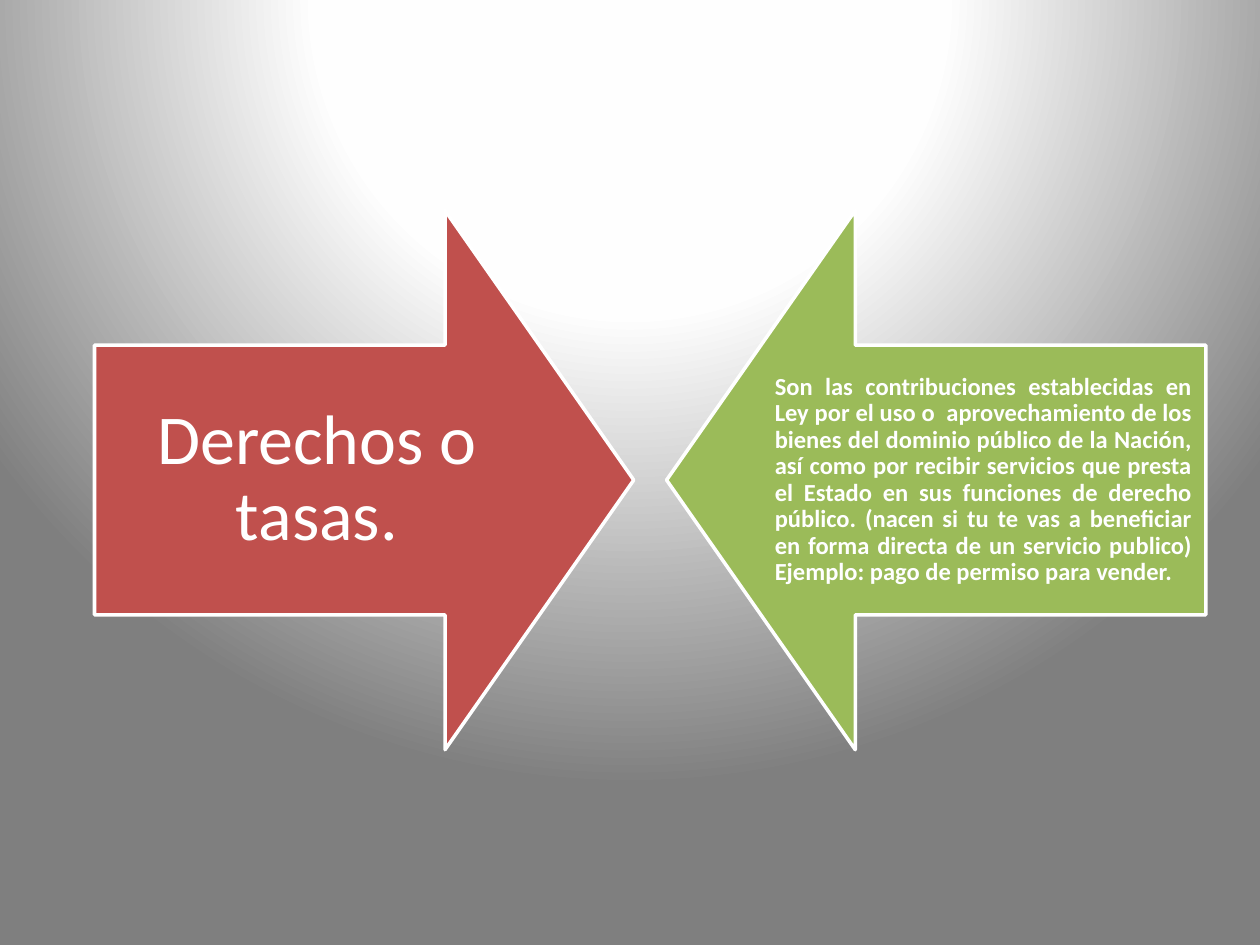
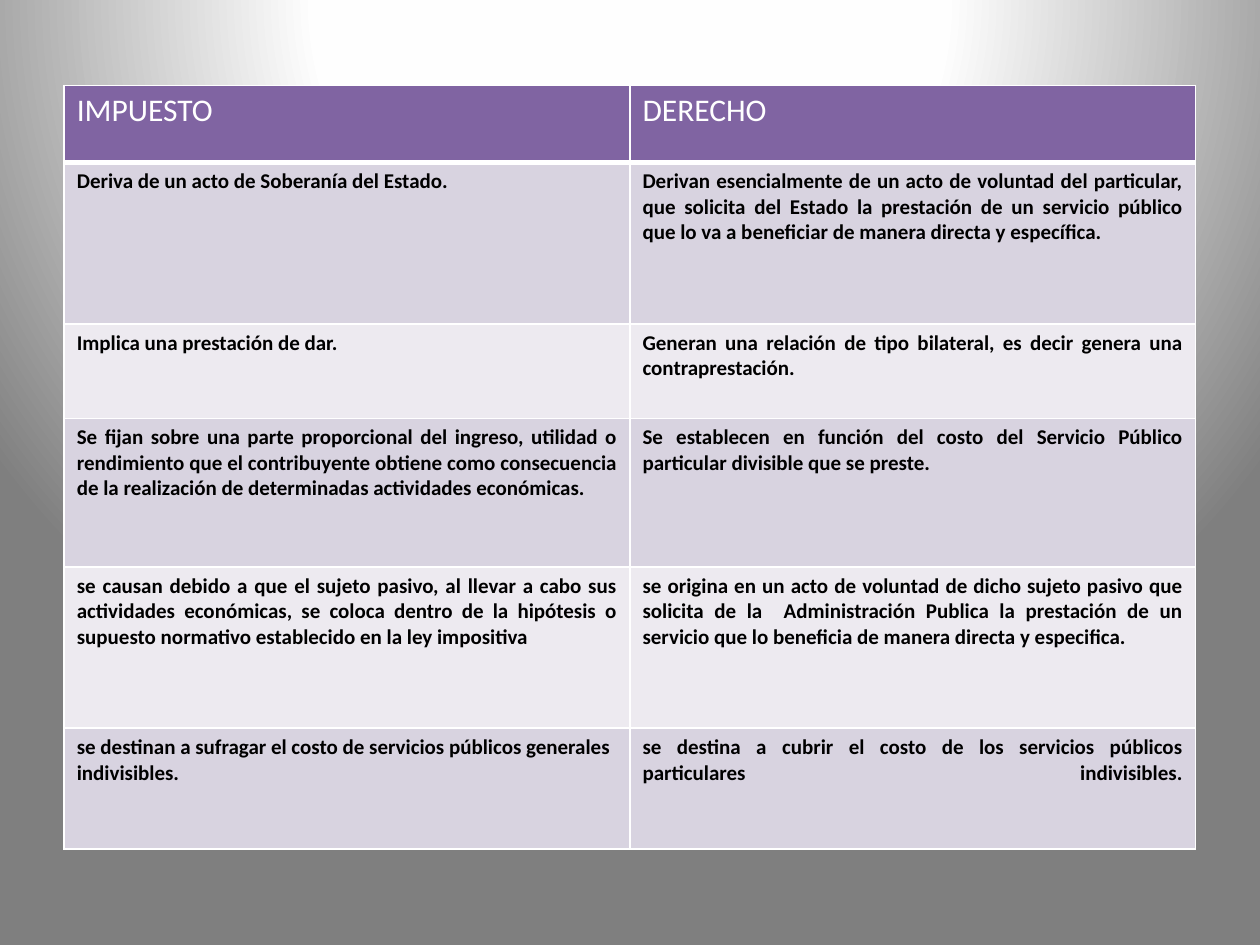
import pptx
import pptx.util
import pptx.dml.color
import pptx.enum.shapes
import pptx.enum.text
import pptx.oxml
import pptx.oxml.ns

SHAPE = pptx.enum.shapes.MSO_SHAPE
ALIGN = pptx.enum.text.PP_ALIGN
ANCHOR = pptx.enum.text.MSO_ANCHOR

# Content
ARROWS = [
    dict(text="Derechos o tasas.", form=SHAPE.RIGHT_ARROW, fill="red",
         size="big", bold=False, align=ALIGN.CENTER, inset=0.31),
    dict(text="Son las contribuciones establecidas en Ley por el uso o  "
              "aprovechamiento de los bienes del dominio público de la Nación, "
              "así como por recibir servicios que presta el Estado en sus "
              "funciones de derecho público. (nacen si tu te vas a beneficiar "
              "en forma directa de un servicio publico) Ejemplo: pago de "
              "permiso para vender.",
         form=SHAPE.LEFT_ARROW, fill="green",
         size="note", bold=True, align=ALIGN.JUSTIFY, inset=0.11),
]

# Each row: height in inches, tax cell, fee cell
ROWS = [
    (0.61, "IMPUESTO", "DERECHO"),
    (1.28, "Deriva de un acto de Soberanía del Estado.",
     "Derivan esencialmente de un acto de voluntad del particular, que "
     "solicita del Estado la prestación de un servicio público que lo va a "
     "beneficiar de manera directa y específica."),
    (0.75, "Implica una prestación de dar.",
     "Generan una relación de tipo bilateral, es decir genera una "
     "contraprestación."),
    (1.18, "Se fijan sobre una parte proporcional del ingreso, utilidad o "
     "rendimiento que el contribuyente obtiene como consecuencia de la "
     "realización de determinadas actividades económicas.",
     "Se establecen en función del costo del Servicio Público particular "
     "divisible que se preste."),
    (1.28, "se causan debido a que el sujeto pasivo, al llevar a cabo sus "
     "actividades económicas, se coloca dentro de la hipótesis o supuesto "
     "normativo establecido en la ley impositiva",
     "se origina en un acto de voluntad de dicho sujeto pasivo que solicita "
     "de la  Administración Publica la prestación de un servicio que lo "
     "beneficia de manera directa y especifica."),
    (0.96, "se destinan a sufragar el costo de servicios públicos generales "
     "indivisibles.",
     "se destina a cubrir el costo de los servicios públicos particulares "
     "indivisibles.\v"),
]

THEME = dict(
    font="Calibri",
    color=dict(white="FFFFFF", black="000000", red="C0504D", green="9BBB59",
               head="8064A2", bands=("D8D3E0", "EDEAF0")),
    glow=((0, "FFFFFF"), (40, "FEFEFE"), (100, "7F7F7F")),
    size=dict(big=40, note=14, head=18, body=12),
)
COLOR, SIZE = THEME["color"], THEME["size"]

# Layout in inches
WIDE, HIGH = 10, 7.5
SIDE = 4.28                     # arrows are square
LEFT, GAP, TOP = 0.75, 0.26, 1.67
GRID_LEFT, GRID_TOP, COL = 0.51, 0.68, 4.49

inch = pptx.util.Inches
rgb = pptx.dml.color.RGBColor.from_string


def style(para, size, color, bold, align):
    para.alignment = align
    for run in para.runs:
        font = run.font
        font.name, font.size, font.bold = THEME["font"], pptx.util.Pt(size), bold
        font.color.rgb = rgb(color)


def set_back(master):
    """Give the master a round glow centred above the slide."""
    master.background.fill.gradient()
    old = master.element.find(".//" + pptx.oxml.ns.qn("a:gradFill"))
    stops = "".join(f'<a:gs pos="{at * 1000}"><a:srgbClr val="{hue}"/></a:gs>'
                    for at, hue in THEME["glow"])
    new = pptx.oxml.parse_xml(
        f'<a:gradFill {pptx.oxml.ns.nsdecls("a")} rotWithShape="1">'
        f'<a:gsLst>{stops}</a:gsLst><a:path path="circle">'
        '<a:fillToRect l="50000" t="-80000" r="50000" b="180000"/>'
        '</a:path></a:gradFill>')
    old.getparent().replace(old, new)


def add_arrow(slide, index, item):
    left = LEFT + index * (SIDE + GAP)
    arrow = slide.shapes.add_shape(
        item["form"], inch(left), inch(TOP), inch(SIDE), inch(SIDE))
    arrow.adjustments[0], arrow.adjustments[1] = 0.5, 0.35
    arrow.shadow.inherit = False
    arrow.fill.solid()
    arrow.fill.fore_color.rgb = rgb(COLOR[item["fill"]])
    arrow.line.color.rgb = rgb(COLOR["white"])
    arrow.line.width = pptx.util.Pt(2)

    frame = arrow.text_frame
    frame.text = item["text"]
    frame.word_wrap = True
    frame.vertical_anchor = ANCHOR.MIDDLE
    for edge in ("left", "top", "right", "bottom"):
        setattr(frame, "margin_" + edge, inch(item["inset"]))
    para = frame.paragraphs[0]
    para.line_spacing = 0.9
    style(para, SIZE[item["size"]], COLOR["white"], item["bold"], item["align"])


def set_edges(cell, base):
    """Draw white borders; base is the width of the lower one in points."""
    props = cell._tc.get_or_add_tcPr()
    widths = (("L", 1), ("R", 1), ("T", 1), ("B", base))
    for spot, (edge, width) in enumerate(widths):
        props.insert(spot, pptx.oxml.parse_xml(
            f'<a:ln{edge} {pptx.oxml.ns.nsdecls("a")} w="{width * 12700}">'
            f'<a:solidFill><a:srgbClr val="{COLOR["white"]}"/></a:solidFill>'
            f'</a:ln{edge}>'))


def add_grid(slide):
    high = sum(row[0] for row in ROWS)
    table = slide.shapes.add_table(
        len(ROWS), 2, inch(GRID_LEFT), inch(GRID_TOP),
        inch(2 * COL), inch(high)).table
    for col in table.columns:
        col.width = inch(COL)
    for r, (tall, *texts) in enumerate(ROWS):
        table.rows[r].height = inch(tall)
        head = r == 0
        fill = COLOR["head"] if head else COLOR["bands"][(r - 1) % 2]
        size = SIZE["head" if head else "body"]
        ink = COLOR["white" if head else "black"]
        for c, text in enumerate(texts):
            cell = table.cell(r, c)
            cell.fill.solid()
            cell.fill.fore_color.rgb = rgb(fill)
            set_edges(cell, 3 if head else 1)
            cell.text_frame.text = text
            loose = r == len(ROWS) - 1 and c == 0
            style(cell.text_frame.paragraphs[0], size, ink, not head,
                  ALIGN.LEFT if loose else ALIGN.JUSTIFY)


def main():
    deck = pptx.Presentation()
    deck.slide_width, deck.slide_height = inch(WIDE), inch(HIGH)
    set_back(deck.slide_master)
    blank = deck.slide_layouts[6]

    slide = deck.slides.add_slide(blank)
    for index, item in enumerate(ARROWS):
        add_arrow(slide, index, item)

    add_grid(deck.slides.add_slide(blank))
    deck.save("out.pptx")


if __name__ == "__main__":
    main()
